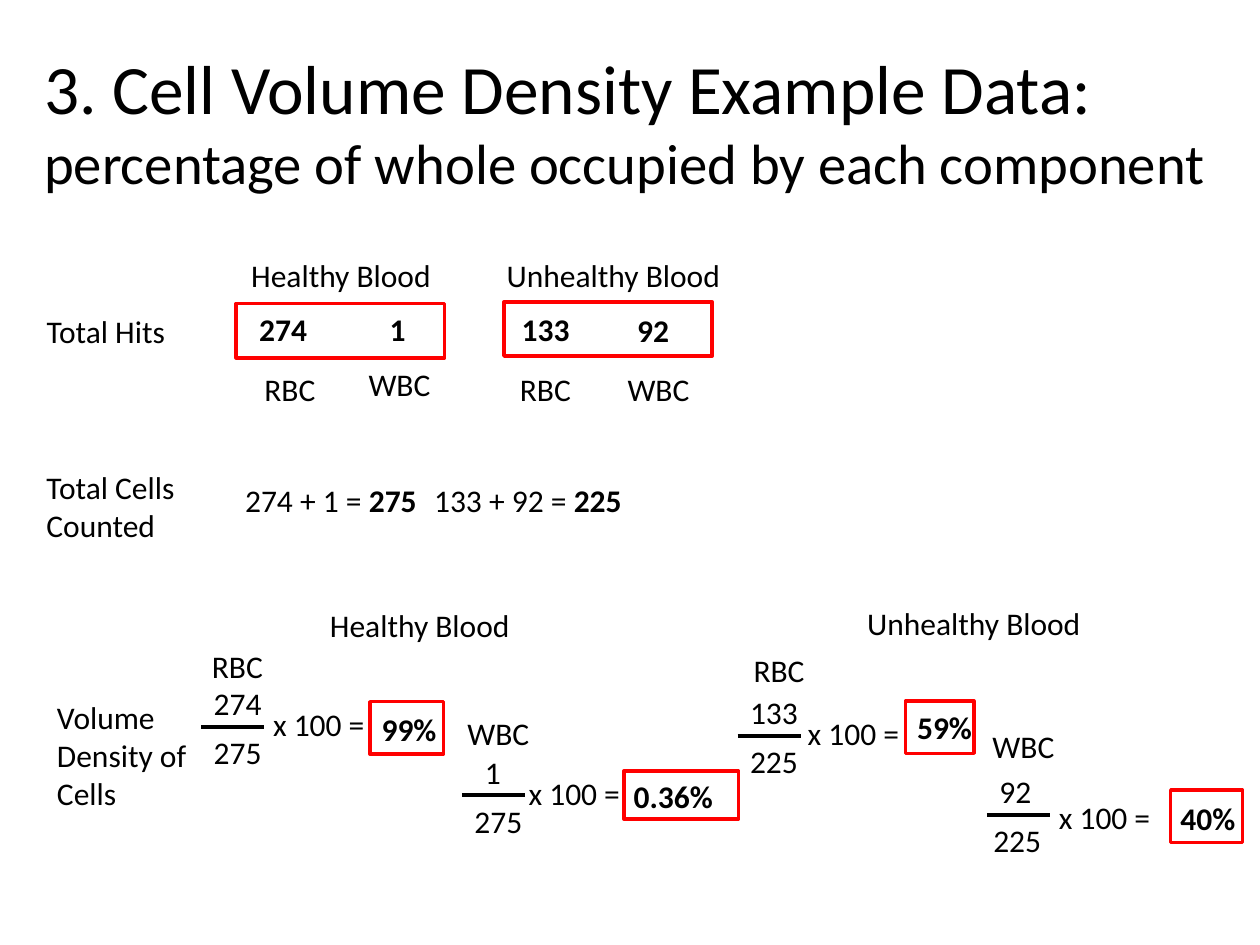
from dataclasses import dataclass

import pptx
import pptx.dml.color
import pptx.enum.shapes
import pptx.enum.text
import pptx.oxml.ns
import pptx.util
from lxml import etree

Pt = pptx.util.Pt
BLACK = pptx.dml.color.RGBColor(0, 0, 0)
RED = pptx.dml.color.RGBColor(255, 0, 0)
FONT = "Calibri"
TEXT_SIZE = 18
LINE_HEIGHT = 29
NUMBER_WIDTH = 51
BAR_WIDTH = 36
NUMERATOR_RISE = 28


@dataclass
class Label:
    text: str
    left: float
    top: float
    width: float
    bold: bool = False
    height: float = LINE_HEIGHT


@dataclass
class Frame:
    left: float
    top: float
    width: float
    height: float


@dataclass
class Density:
    """A fraction over its bar, times 100, with a framed percentage."""
    cell: Label
    numerator: str
    denominator: str
    bar_left: float
    bar_top: float
    times_left: float
    times_top: float
    result: Label
    frame: Frame
    numerator_shift: float = 0
    denominator_shift: float = 0


LABELS = [
    # Row headings
    Label("Total Hits", 19.5, 175, 96),
    Label("Total Cells Counted", 19.5, 264, 108, height=51),
    Label("Volume Density of Cells", 25.5, 395.5, 108, height=73),
    # Blood headings
    Label("Healthy Blood", 136.5, 143, 144),
    Label("Unhealthy Blood", 282.5, 143, 144),
    Label("Healthy Blood", 181.5, 343, 144),
    Label("Unhealthy Blood", 488.5, 341.5, 144),
    # Hits and their cell types
    Label("274", 141, 173.5, NUMBER_WIDTH, True),
    Label("1", 215.5, 173.5, NUMBER_WIDTH, True),
    Label("133", 291, 173.5, NUMBER_WIDTH, True),
    Label("92", 357, 174, NUMBER_WIDTH, True),
    Label("RBC", 144, 208, 48),
    Label("WBC", 203.5, 205, 54),
    Label("RBC", 290, 208, 48),
    Label("WBC", 351.5, 208, 54),
]

HIT_FRAMES = [Frame(135, 173.5, 119, 31), Frame(288, 172.5, 119, 31)]

DENSITIES = [
    Density(Label("RBC", 114, 366, 48), "274", "275", 115, 415.5, 149, 399.5,
            Label("99%", 211, 402, 58, True), Frame(211.5, 401, 42, 30)),
    Density(Label("WBC", 260, 404.5, 54), "1", "275", 264, 454.5, 295, 438.5,
            Label("0.36%", 355, 440.5, 72, True), Frame(356.5, 440.5, 65.5, 27.5),
            numerator_shift=6),
    Density(Label("RBC", 423.5, 368.5, 48), "133", "225", 421.5, 420.5, 454.5, 404.5,
            Label("59%", 517, 401, 72, True), Frame(517.5, 400.5, 39, 30)),
    Density(Label("WBC", 560, 412, 54), "92", "225", 564, 465.5, 598, 452.5,
            Label("40%", 667.5, 453, 72, True), Frame(669, 451.5, 41, 30),
            denominator_shift=-3.5),
]


def add_span(para, text: str, size: float = TEXT_SIZE, bold: bool = False) -> None:
    span = para.add_run()
    span.text = text
    formats = {"name": FONT, "size": Pt(size), "bold": bold}
    for name, value in formats.items():
        setattr(span.font, name, value)
    span.font.color.rgb = BLACK


def add_box(page, left: float, top: float, width: float, height: float):
    """Add a wrapping text box and return its first paragraph."""
    box = page.shapes.add_textbox(Pt(left), Pt(top), Pt(width), Pt(height))
    box.text_frame.word_wrap = True
    return box.text_frame.paragraphs[0]


def add_label(page, label: Label) -> None:
    para = add_box(page, label.left, label.top, label.width, label.height)
    add_span(para, label.text, bold=label.bold)


def add_frame(page, frame: Frame) -> None:
    box = page.shapes.add_shape(
        pptx.enum.shapes.MSO_SHAPE.RECTANGLE,
        Pt(frame.left), Pt(frame.top), Pt(frame.width), Pt(frame.height))
    box.shadow.inherit = False
    box.fill.background()
    box.line.color.rgb = RED
    box.line.width = Pt(2)


def add_bar(page, left: float, top: float) -> None:
    bar = page.shapes.add_connector(
        pptx.enum.shapes.MSO_CONNECTOR.STRAIGHT,
        Pt(left), Pt(top), Pt(left + BAR_WIDTH), Pt(top))
    bar.line.color.rgb = BLACK
    bar.line.width = Pt(2.25)
    properties = bar._element.spPr
    etree.SubElement(properties, pptx.oxml.ns.qn("a:effectLst"))


def add_density(page, density: Density) -> None:
    left, top = density.bar_left, density.bar_top
    add_label(page, density.cell)
    add_label(page, Label(density.numerator, left + density.numerator_shift,
                          top - NUMERATOR_RISE, NUMBER_WIDTH))
    add_label(page, Label(density.denominator, left + density.denominator_shift,
                          top, NUMBER_WIDTH))
    add_bar(page, left, top)
    add_label(page, Label("x 100 =", density.times_left, density.times_top, 72))
    add_label(page, density.result)
    add_frame(page, density.frame)


def add_title(page) -> None:
    title = page.shapes.title
    place = {"left": 18, "top": 18, "width": 678, "height": 102}
    for name, value in place.items():
        setattr(title, name, Pt(value))
    formats = {"word_wrap": True,
               "auto_size": pptx.enum.text.MSO_AUTO_SIZE.NONE,
               "vertical_anchor": pptx.enum.text.MSO_ANCHOR.MIDDLE}
    for name, value in formats.items():
        setattr(title.text_frame, name, value)
    para = title.text_frame.paragraphs[0]
    para.alignment = pptx.enum.text.PP_ALIGN.LEFT
    add_span(para, "3. Cell Volume Density Example Data:", 39.6)
    para.add_line_break()
    add_span(para, "percentage of whole occupied by each component", 32.4)


def main() -> None:
    deck = pptx.Presentation()
    deck.slide_width, deck.slide_height = Pt(720), Pt(540)
    page = deck.slides.add_slide(deck.slide_layouts.get_by_name("Title Only"))
    add_title(page)

    # Headings and counted hits
    for label in LABELS:
        add_label(page, label)
    for frame in HIT_FRAMES:
        add_frame(page, frame)

    # Total cells: both sums share one line, parted by a tab
    para = add_box(page, 133, 271.5, 412.5, LINE_HEIGHT)
    for text, bold in [("274 + 1 = ", False), ("275", True),
                       ("\t133 + 92 = ", False), ("225", True)]:
        add_span(para, text, bold=bold)

    # Volume density of each cell type
    for density in DENSITIES:
        add_density(page, density)

    deck.save("out.pptx")


if __name__ == "__main__":
    main()
